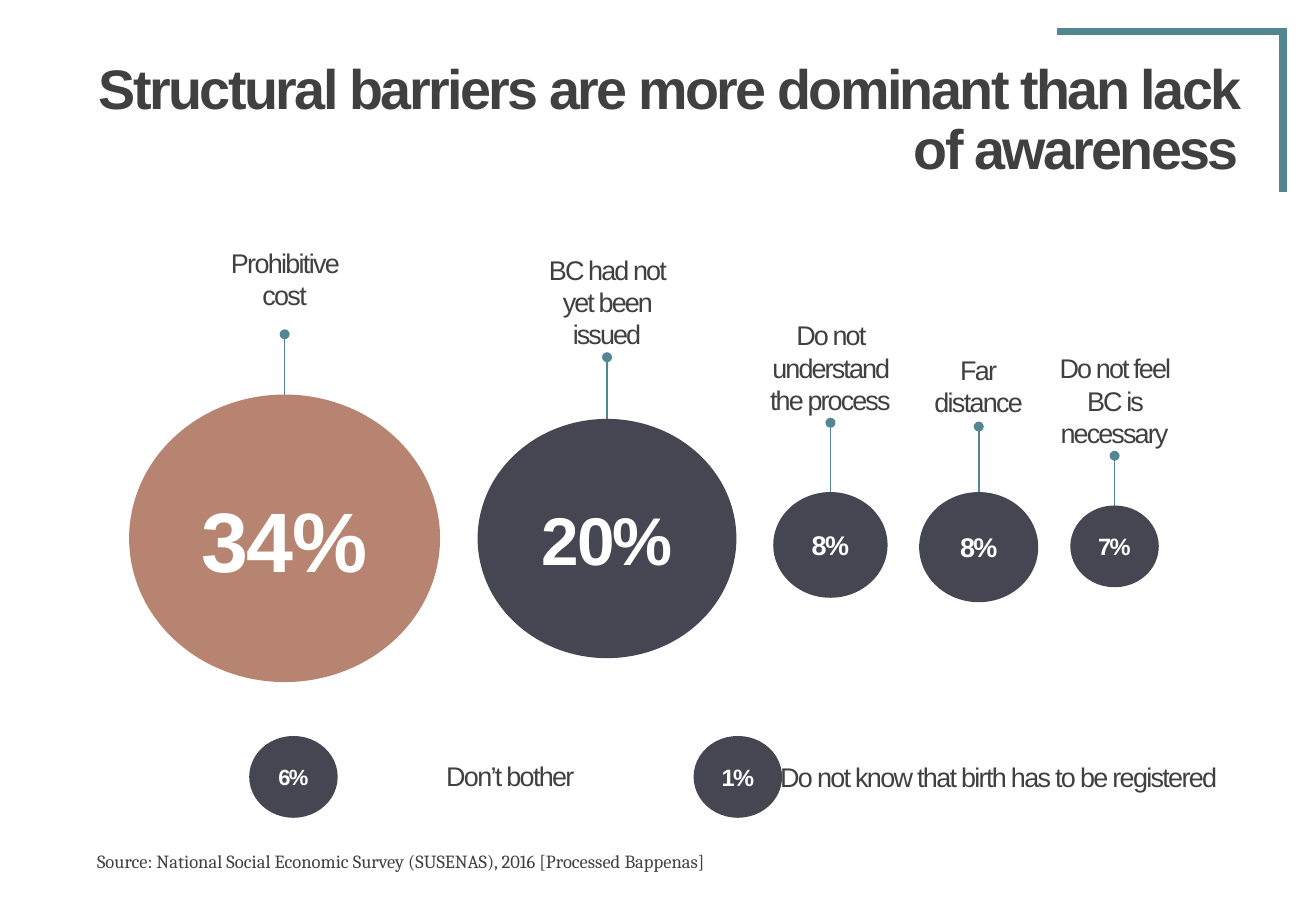
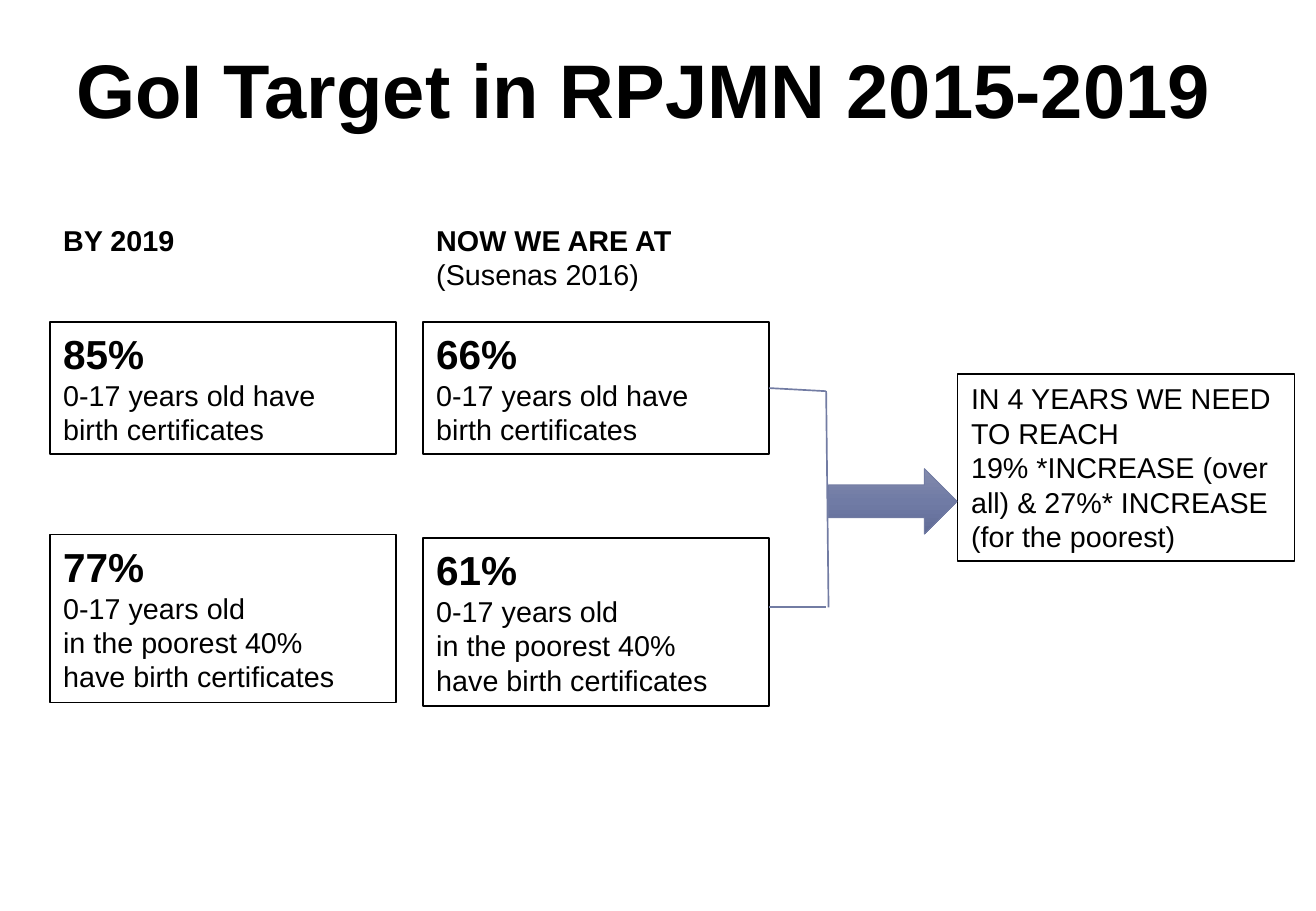
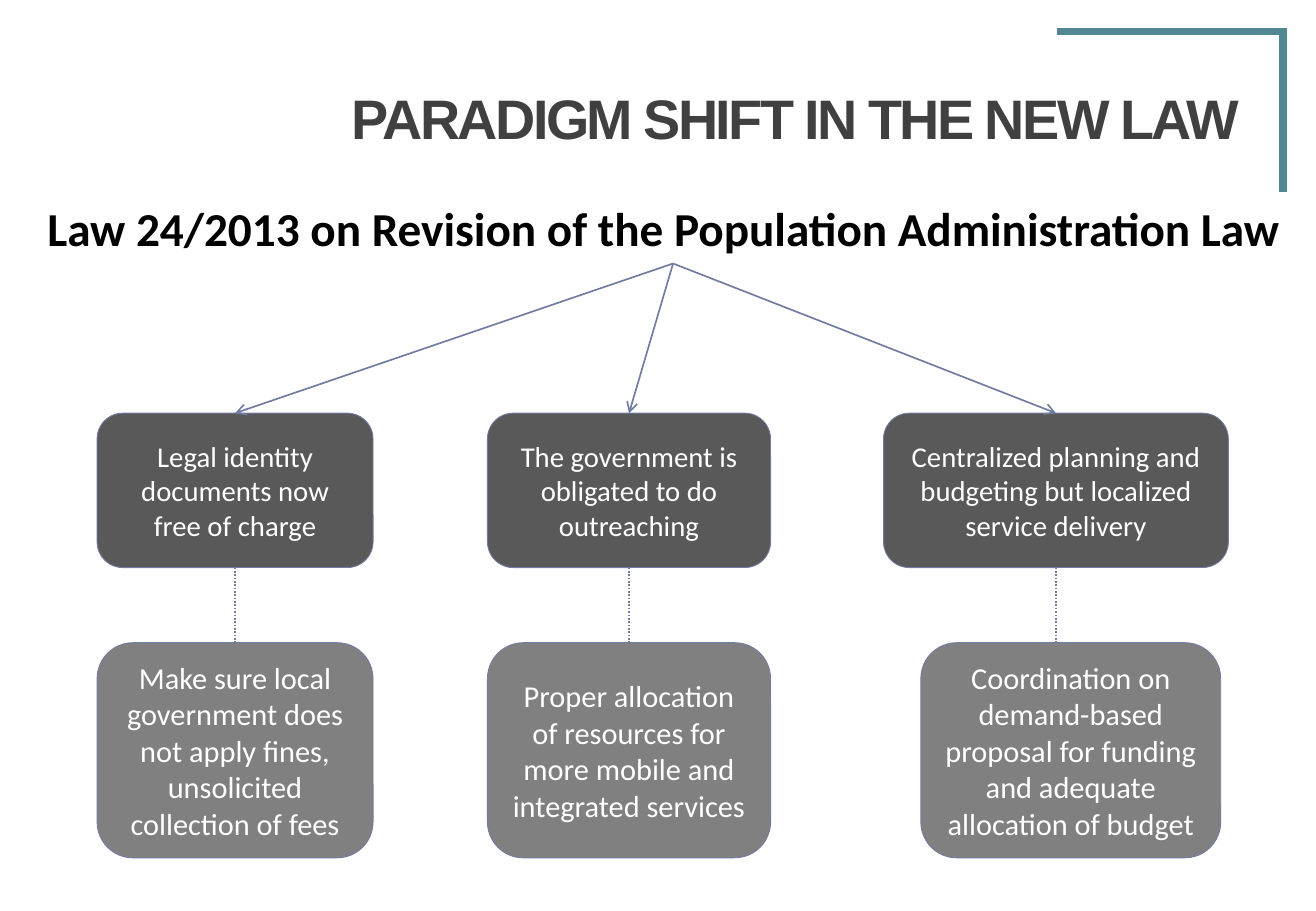
from copy import deepcopy
from dataclasses import dataclass

from lxml import etree
from pptx import Presentation
from pptx import util as u
from pptx.dml import color
from pptx.enum import dml, shapes, text as t
from pptx.oxml import ns

TEAL, BLUE, SLATE, CLAY = "528693", "727CA3", "464653", "B88472"
INK, BLACK, WHITE = "404040", "000000", "FFFFFF"
DARK_GREY, MID_GREY = "595959", "808080"
ROOMY, TIGHT = (0.28, 0.15), (0.23, 0.1)
CENTRE = t.PP_ALIGN.CENTER
LABEL_WIDTH, LABEL_HEIGHT = 3.25, 3.18
STEM = 1.9
BUBBLE_RATIO = 0.925


@dataclass
class Bubble:
    value: str
    size: float
    centre: float
    top: float
    width: float
    stem_top: float
    label: str
    label_gap: float = 2.75
    fill: str = SLATE


@dataclass
class LegendItem:
    value: str
    size: float
    left: float
    label: str
    label_left: float
    label_top: float
    label_width: float


@dataclass
class TargetBox:
    left: float
    top: float
    height: float
    value: str
    detail: str


@dataclass
class Reform:
    left: float
    width: float
    change: str
    action_left: float
    action_width: float
    action: str


BUBBLES = [
    Bubble("34%", 50, 5.95, 8.25, 6.5, 6.99, "Prohibitive cost", fill=CLAY),
    Bubble("20%", 40, 12.69, 8.76, 5.41, 7.47, "BC had not yet been issued"),
    Bubble("8%", 16, 17.36, 10.29, 2.39, 8.84, "Do not understand the process"),
    Bubble("8%", 16, 20.46, 10.29, 2.49, 8.92, "Far\ndistance", label_gap=2.44),
    Bubble("7%", 14, 23.3, 10.57, 1.85, 9.53, "Do not feel BC is necessary"),
]
LEGEND = [
    LegendItem("6%", 13, 5.21, "Don’t bother", 6.76, 14.63, 7.82),
    LegendItem("1%", 14, 14.5, "Do not know that birth has to be registered", 15.75, 14.66, 10.26),
]
ALL_CHILDREN = "0-17 years old have\nbirth certificates"
POOREST = "0-17 years old\nin the poorest 40%\nhave birth certificates"
TARGETS = [
    TargetBox(1.04, 6.73, 2.77, "85%", ALL_CHILDREN),
    TargetBox(1.04, 11.18, 3.51, "77%", POOREST),
    TargetBox(8.84, 11.25, 3.51, "61%", POOREST),
    TargetBox(8.84, 6.73, 2.77, "66%", ALL_CHILDREN),
]
REFORMS = [
    Reform(2.03, 5.77, "Legal identity documents now free of charge", 2.03, 5.77,
           "Make sure local government does not apply fines, unsolicited collection of fees"),
    Reform(10.19, 5.92, "The government is obligated to do outreaching", 10.19, 5.92,
           "Proper allocation of resources for more mobile and integrated services"),
    Reform(18.47, 7.21, "Centralized planning and budgeting but localized service delivery", 19.25, 6.27,
           "Coordination on demand-based proposal for funding and adequate allocation of budget"),
]


def rgb(value: str) -> color.RGBColor:
    return color.RGBColor.from_string(value)


def write(shape, text: str, *, size: float, colour: str = BLACK, font: str = "Arial",
          bold: bool = False, align=t.PP_ALIGN.LEFT, anchor=t.MSO_ANCHOR.TOP,
          inset=(0.25, 0.13), tracking: float = 0, spacing: float | None = None,
          wrap: bool = True) -> None:
    frame = shape.text_frame
    frame.word_wrap = wrap
    frame.vertical_anchor = anchor
    frame.margin_left = frame.margin_right = u.Cm(inset[0])
    frame.margin_top = frame.margin_bottom = u.Cm(inset[1])
    for line in text.split("\n"):
        paragraph = frame.add_paragraph() if frame.text else frame.paragraphs[0]
        paragraph.alignment = align
        if spacing:
            paragraph.line_spacing = spacing
        run = paragraph.add_run()
        run.text = line
        run.font.name, run.font.size, run.font.bold = font, u.Pt(size), bold
        run.font.color.rgb = rgb(colour)
        if tracking:
            run.font._element.set("spc", str(round(tracking * 100)))


def add_text(slide, left: float, top: float, width: float, height: float, text: str, **style):
    box = slide.shapes.add_textbox(u.Cm(left), u.Cm(top), u.Cm(width), u.Cm(height))
    write(box, text, **style)
    return box


def add_shape(slide, kind, left: float, top: float, width: float, height: float,
              fill: str, line: str | None = None, weight: float = 1):
    shape = slide.shapes.add_shape(kind, u.Cm(left), u.Cm(top), u.Cm(width), u.Cm(height))
    shape.shadow.inherit = False
    shape.fill.solid()
    shape.fill.fore_color.rgb = rgb(fill)
    if line:
        shape.line.color.rgb = rgb(line)
        shape.line.width = u.Pt(weight)
    else:
        shape.line.fill.background()
    return shape


def add_line(slide, start, end, colour: str = BLUE, weight: float = 1, dash=None,
             head: str | None = None, tail: str | None = None):
    line = slide.shapes.add_connector(shapes.MSO_CONNECTOR.STRAIGHT, *map(u.Cm, (*start, *end)))
    line.line.color.rgb = rgb(colour)
    line.line.width = u.Pt(weight)
    if dash:
        line.line.dash_style = dash
    outline = line.line._get_or_add_ln()
    for tag, kind in (("a:headEnd", head), ("a:tailEnd", tail)):
        if kind:
            etree.SubElement(outline, ns.qn(tag)).set("type", kind)
    etree.SubElement(line._element.spPr, ns.qn("a:effectLst"))
    return line


def add_corner_title(slide, title: str) -> None:
    add_text(slide, 0.91, 1.27, 25.22, 2.54, title, size=33, colour=INK, bold=True,
             align=t.PP_ALIGN.RIGHT, anchor=t.MSO_ANCHOR.MIDDLE, inset=TIGHT,
             tracking=-1.5, spacing=0.9)
    add_line(slide, (26.82, 4.01), (26.82, 0.64), TEAL, 4.5)
    add_line(slide, (22.1, 0.66), (26.9, 0.66), TEAL, 4.5)


def add_bubble(slide, left: float, top: float, width: float, value: str, size: float, fill: str) -> None:
    bubble = add_shape(slide, shapes.MSO_SHAPE.OVAL, left, top, width, width * BUBBLE_RATIO, fill)
    write(bubble, value, size=size, colour=WHITE, bold=True, align=CENTRE,
          anchor=t.MSO_ANCHOR.MIDDLE, inset=(0, 0), tracking=-1)


def add_label(slide, left: float, top: float, width: float, label: str, tracking: float = -1) -> None:
    add_text(slide, left, top, width, LABEL_HEIGHT, label, size=16, colour=INK,
             align=CENTRE, anchor=t.MSO_ANCHOR.MIDDLE, tracking=tracking)


def build_barriers(slide) -> None:
    add_corner_title(slide, "Structural barriers are more dominant than lack of awareness")
    for item in BUBBLES:
        add_label(slide, item.centre - LABEL_WIDTH / 2, item.stem_top - item.label_gap,
                  LABEL_WIDTH, item.label, -1.1 if len(item.label) > 16 else -1)
        add_line(slide, (item.centre, item.stem_top + STEM), (item.centre, item.stem_top),
                 TEAL, head="oval", tail="oval")
        add_bubble(slide, item.centre - item.width / 2, item.top, item.width,
                   item.value, item.size, item.fill)
    for item in LEGEND:
        add_bubble(slide, item.left, 15.39, 1.85, item.value, item.size, SLATE)
        add_label(slide, item.label_left, item.label_top, item.label_width, item.label)
    add_text(slide, 1.78, 17.65, 15.93, 0.74,
             "Source: National Social Economic Survey (SUSENAS), 2016 [Processed Bappenas]",
             size=11, colour=INK, font="Cambria")


def add_gradient_arrow(slide) -> None:
    arrow = add_shape(slide, shapes.MSO_SHAPE.RIGHT_ARROW, 17.32, 9.8, 2.69, 1.37, BLUE, BLUE, 0.5)
    arrow.fill.gradient()
    arrow.fill.gradient_angle = 270
    stops = arrow._element.spPr.find(".//" + ns.qn("a:gsLst"))
    stops.insert(1, deepcopy(stops[0]))
    for stop, position, colour in zip(arrow.fill.gradient_stops, (0, 0.5, 1),
                                      ("838BAD", "707BA5", "606B96")):
        stop.position = position
        stop.color.rgb = rgb(colour)


def build_targets(slide) -> None:
    add_text(slide, 1.37, 0.76, 24.77, 2.39, "GoI Target in RPJMN 2015-2019", size=45, bold=True,
             anchor=t.MSO_ANCHOR.MIDDLE, inset=TIGHT, spacing=0.9)
    add_text(slide, 1.04, 4.5, 2.92, 1.02, "BY 2019", size=17, bold=True, inset=ROOMY, wrap=False)
    now = add_text(slide, 8.84, 4.5, 5.54, 1.75, "NOW WE ARE AT", size=17, bold=True,
                   inset=ROOMY, wrap=False)
    write(now, "(Susenas 2016)", size=17, inset=ROOMY, wrap=False)
    for target in TARGETS:
        box = add_shape(slide, shapes.MSO_SHAPE.RECTANGLE, target.left, target.top, 7.24,
                        target.height, WHITE, BLACK)
        write(box, target.value, size=24, bold=True, inset=ROOMY)
        write(box, target.detail, size=17, inset=ROOMY)
    result = add_shape(slide, shapes.MSO_SHAPE.RECTANGLE, 20.02, 7.82, 7.04, 3.91, WHITE, BLACK)
    write(result, "IN 4 YEARS WE NEED TO REACH\n"
          "19% *INCREASE (over all) & 27%* INCREASE (for the poorest)", size=17, inset=ROOMY)
    add_gradient_arrow(slide)
    upper = add_line(slide, (16.08, 8.11), (17.27, 8.18))
    upper.begin_connect(box, 3)
    add_line(slide, (16.08, 12.7), (17.27, 12.7))
    add_line(slide, (17.27, 8.18), (17.32, 12.7))


def add_card(slide, left: float, top: float, width: float, height: float,
             text: str, size: float, fill: str):
    card = add_shape(slide, shapes.MSO_SHAPE.ROUNDED_RECTANGLE, left, top, width, height, fill, BLUE, 0.5)
    write(card, text, size=size, colour=WHITE, font="Calibri", align=CENTRE,
          anchor=t.MSO_ANCHOR.MIDDLE, inset=ROOMY)
    return card


def build_paradigm(slide) -> None:
    law = add_text(slide, 0.71, 4.01, 26.72, 1.5,
                   "Law 24/2013 on Revision of the Population Administration Law",
                   size=28, font="Calibri", bold=True, inset=ROOMY)
    for reform in REFORMS:
        change = add_card(slide, reform.left, 8.64, reform.width, 3.23, reform.change, 17, DARK_GREY)
        action = add_card(slide, reform.action_left, 13.44, reform.action_width, 4.5,
                          reform.action, 18, MID_GREY)
        centre = reform.left + reform.width / 2
        arrow = add_line(slide, (14.07, 5.51), (centre, 8.64), tail="arrow")
        arrow.begin_connect(law, 2)
        arrow.end_connect(change, 0)
        dotted = add_line(slide, (centre, 11.87), (centre, 13.44), dash=dml.MSO_LINE.ROUND_DOT)
        dotted.begin_connect(change, 2)
        if reform.left == reform.action_left:
            dotted.end_connect(action, 0)
    add_corner_title(slide, "PARADIGM SHIFT IN THE NEW LAW")


def main() -> None:
    presentation = Presentation()
    presentation.slide_width, presentation.slide_height = u.Cm(27.51), u.Cm(19.05)
    for build in (build_barriers, build_targets, build_paradigm):
        build(presentation.slides.add_slide(presentation.slide_layouts[6]))
    presentation.save("out.pptx")


if __name__ == "__main__":
    main()
